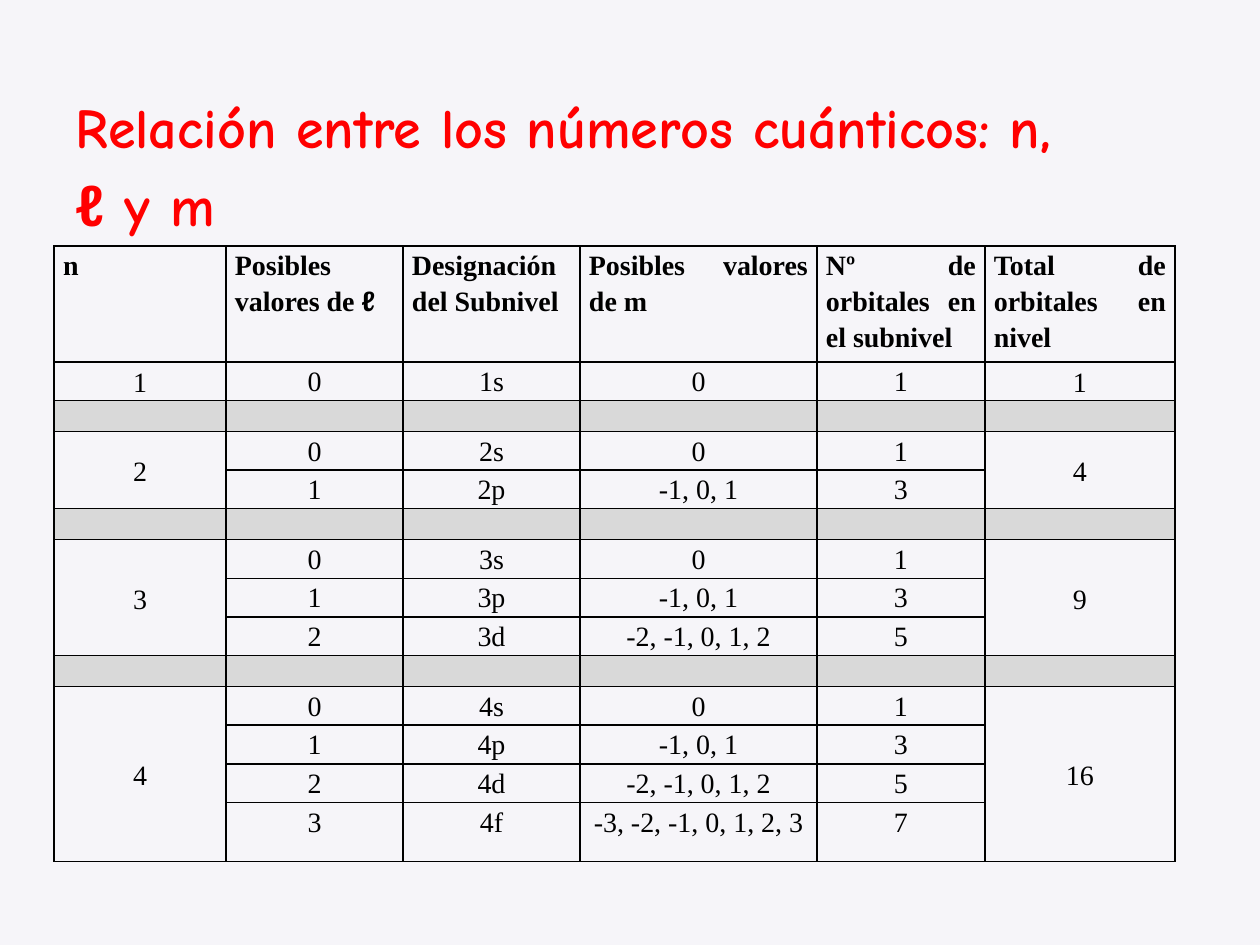
from lxml import etree
from pptx import Presentation
from pptx import util as u
from pptx.dml.color import RGBColor
from pptx.enum import text
from pptx.oxml import ns

SCALE = 914400 / 126
RED = RGBColor(0xFF, 0, 0)
BLACK = RGBColor(0, 0, 0)
GREY = RGBColor(0xD9, 0xD9, 0xD9)
PALE = RGBColor(0xF6, 0xF5, 0xF9)

TITLE = ["Relación entre los números cuánticos: n,", "ℓ y m"]
HEADS = ["n", "Posibles valores de ℓ", "Designación del Subnivel",
         "Posibles valores de m", "Nº de orbitales en el subnivel",
         "Total de orbitales en nivel"]
WIDTHS = [172, 177, 177, 237, 168, 190]
HEAD, ROW, GAP, LAST = 107, 36, 31, 59
LEVELS = 4


def px(n):
    return u.Emu(round(n * SCALE))


def style(par, face, size, color, bold):
    font = par.font
    font.name, font.size, font.bold = face, u.Pt(size), bold
    font.color.rgb = color


def title(slide, x, y, w, h):
    frame = slide.shapes.add_textbox(px(x), px(y), px(w), px(h)).text_frame
    frame.word_wrap = True
    for i, line in enumerate(TITLE):
        par = frame.paragraphs[0] if i == 0 else frame.add_paragraph()
        par.text = line
        par.space_before = u.Pt(6.4)
        style(par, "Comic Neue", 32, RED, True)


def border(cell):
    props = cell._tc.get_or_add_tcPr()
    for side in ("lnL", "lnR", "lnT", "lnB"):
        line = etree.SubElement(props, ns.qn("a:" + side), w=str(u.Pt(1)))
        fill = etree.SubElement(line, ns.qn("a:solidFill"))
        etree.SubElement(fill, ns.qn("a:srgbClr"), val=str(BLACK))


def write(cell, words, head=False):
    par = cell.text_frame.paragraphs[0]
    for part in words.partition("ℓ"):
        if part:
            run = par.add_run()
            run.text = part
            if part == "ℓ":
                run.font.name = "Arial"
    par.alignment = text.PP_ALIGN.JUSTIFY if head else text.PP_ALIGN.CENTER
    par.line_spacing = 1.15
    style(par, "Times New Roman", 16, BLACK, head)


def shade(cell):
    cell.fill.solid()
    cell.fill.fore_color.rgb = GREY
    par = cell.text_frame.paragraphs[0]
    etree.SubElement(par._p, ns.qn("a:endParaRPr"), sz="1200")


def lines():
    rows = [(HEAD, HEADS)]
    for n in range(1, LEVELS + 1):
        if n > 1:
            rows.append((GAP, None))
        for l in range(n):
            span = ", ".join(str(m) for m in range(-l, l + 1))
            inner = [str(l), f"{n}{'spdf'[l]}", span, str(2 * l + 1)]
            ends = ("", "") if l else (str(n), str(n * n))
            rows.append((ROW, [ends[0], *inner, ends[1]]))
    rows[-1] = (LAST, rows[-1][1])
    return rows


def orbitals(slide, x, y):
    rows = lines()
    high = sum(h for h, _ in rows)
    grid = slide.shapes.add_table(len(rows), len(WIDTHS), px(x), px(y),
                                  px(sum(WIDTHS)), px(high)).table
    grid.first_row = grid.horz_banding = False
    for col, wide in zip(grid.columns, WIDTHS):
        col.width = px(wide)
    for r, (tall, words) in enumerate(rows):
        grid.rows[r].height = px(tall)
        for c in range(len(WIDTHS)):
            cell = grid.cell(r, c)
            cell.margin_left = cell.margin_right = px(9)
            cell.margin_top = cell.margin_bottom = 0
            border(cell)
            if words is None:
                shade(cell)
                continue
            cell.fill.background()
            if words[c]:
                write(cell, words[c], r == 0)
    top = 1
    for n in range(1, LEVELS + 1):
        for c in (0, len(WIDTHS) - 1):
            cell = grid.cell(top, c)
            cell.vertical_anchor = text.MSO_ANCHOR.MIDDLE
            if n > 1:
                cell.merge(grid.cell(top + n - 1, c))
        top += n + 1


def main():
    deck = Presentation()
    deck.slide_width, deck.slide_height = px(1260), px(945)
    slide = deck.slides.add_slide(deck.slide_layouts[6])
    slide.background.fill.solid()
    slide.background.fill.fore_color.rgb = PALE
    title(slide, 63, 86, 1134, 198)
    orbitals(slide, 54, 246)
    deck.save("out.pptx")


if __name__ == "__main__":
    main()
